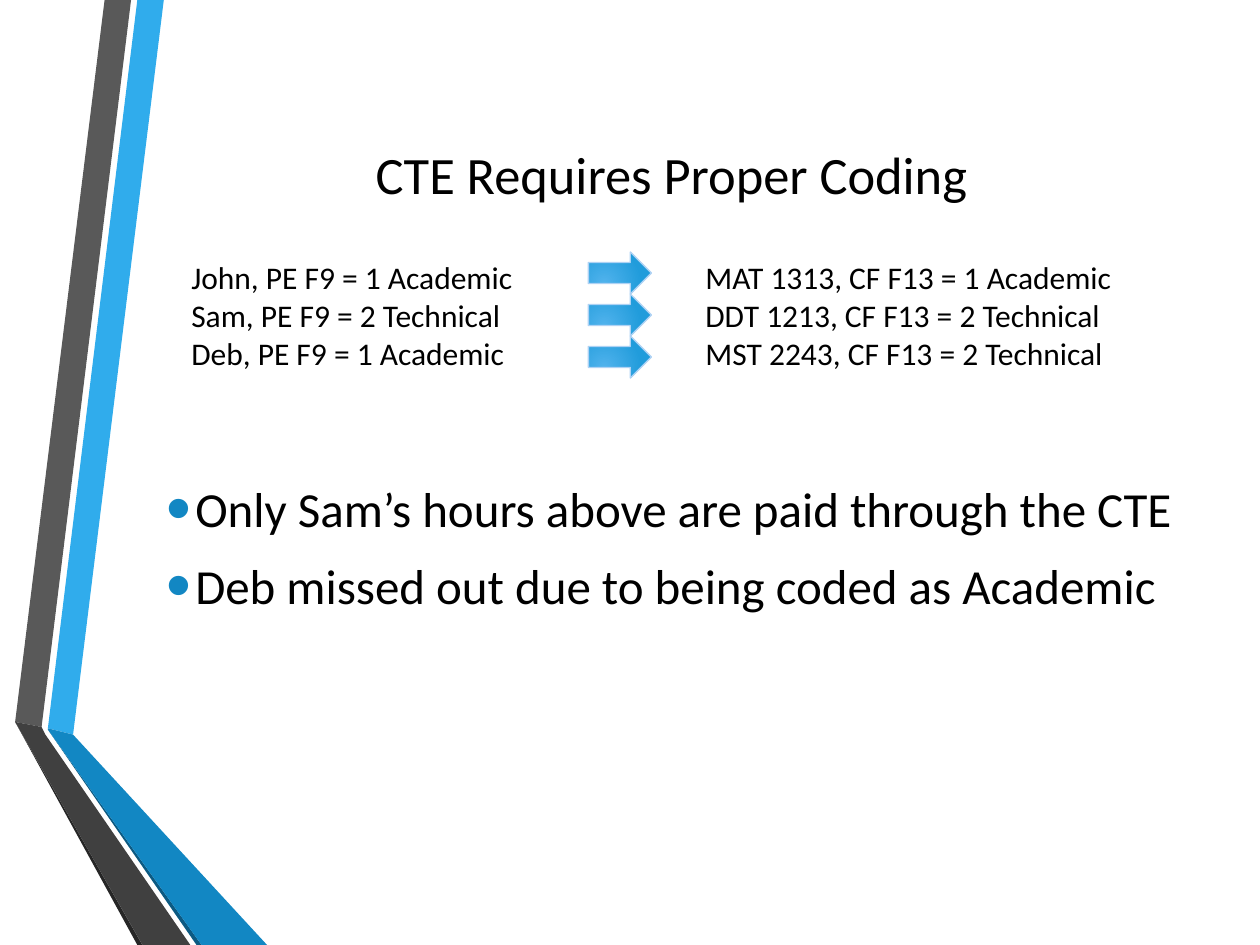
"""Build the slide on proper CTE coding."""
from lxml import etree
from pptx import Presentation
from pptx.dml.color import RGBColor
from pptx.enum.shapes import MSO_SHAPE
from pptx.enum.text import MSO_ANCHOR, MSO_AUTO_SIZE, PP_ALIGN
from pptx.oxml.ns import qn
from pptx.util import Inches, Pt

ARROW = MSO_SHAPE.RIGHT_ARROW
TOP, MID = MSO_ANCHOR.TOP, MSO_ANCHOR.MIDDLE
LEFT, CENTER = PP_ALIGN.LEFT, PP_ALIGN.CENTER
NONE = MSO_AUTO_SIZE.NONE

HUES = {
    "text": "000000", "sky": "30ACEC", "blue": "1287C3", "navy": "0C5A82",
    "gray": "595959", "dark": "404040", "black": "262626",
    "inner": "51B3ED", "outer": "219CDB", "edge": "AED2F4",
}
TITLE = ["CTE Requires Proper Coding"]
POINTS = [
    "Only Sam’s hours above are paid through the CTE",
    "Deb missed out due to being coded as Academic",
]
PEOPLE = [
    "John, PE F9 = 1 Academic",
    "Sam, PE F9 = 2 Technical",
    "Deb, PE F9 = 1 Academic",
]
CODES = [
    "MAT 1313, CF F13 = 1 Academic",
    "DDT 1213, CF F13 = 2 Technical",
    "MST 2243, CF F13 = 2 Technical",
]
BANDS = [
    ("sky", [(0.38, 5.78), (0.58, 5.83), (1.3, 0), (1.09, 0)]),
    ("gray", [(1.04, 0), (0.83, 0), (0.12, 5.73), (0.33, 5.77)]),
    ("black", [(0.12, 5.73), (1.09, 7.5), (1.13, 7.5)]),
    ("navy", [(0.38, 5.79), (1.56, 7.5), (1.6, 7.5)]),
    ("blue", [(0.38, 5.79), (1.6, 7.5), (2.12, 7.5), (0.58, 5.83), (0.38, 5.78)]),
    ("dark", [(1.51, 7.5), (0.36, 5.83), (0.33, 5.77), (0.12, 5.73), (1.13, 7.5)]),
]
ROW_TOP, ROW_GAP = 2, 1 / 3


def rgb(name):
    return RGBColor.from_string(HUES[name])


def place(shape, box):
    for key, val in zip(("left", "top", "width", "height"), box):
        setattr(shape, key, Inches(val))


def write(shape, lines, size, look, align=LEFT):
    frame = shape.text_frame
    for key, val in {"word_wrap": True, "auto_size": NONE, **look}.items():
        setattr(frame, key, val)
    frame.text = "\n".join(lines)
    for para in frame.paragraphs:
        para.alignment = align
        font = para.runs[0].font
        for key, val in {"name": "Calibri", "size": Pt(size)}.items():
            setattr(font, key, val)
        font.color.rgb = rgb("text")


def bullet(para):
    para.space_before, para.space_after = Pt(5.6), Pt(4.5)
    props = para._p.get_or_add_pPr()
    props.set("marL", str(Inches(0.23)))
    props.set("indent", str(Inches(-0.23)))
    hue = etree.SubElement(props, qn("a:buClr"))
    etree.SubElement(hue, qn("a:srgbClr"), val=HUES["blue"])
    for tag, atts in (
        ("buSzPct", {"val": "145000"}),
        ("buFont", {"typeface": "Arial"}),
        ("buChar", {"char": "•"}),
    ):
        etree.SubElement(props, qn("a:" + tag), atts)


def draw_band(shapes, hue, dots):
    dots = [(Inches(x), Inches(y)) for x, y in dots]
    pen = shapes.build_freeform(*dots[0], scale=1.0)
    pen.add_line_segments(dots[1:], close=True)
    band = pen.convert_to_shape()
    band.shadow.inherit = False
    band.fill.solid()
    band.fill.fore_color.rgb = rgb(hue)
    band.line.fill.background()


def draw_arrow(shapes, row):
    box = (4.67, ROW_TOP + row * ROW_GAP, 0.5, ROW_GAP)
    arrow = shapes.add_shape(ARROW, *map(Inches, box))
    arrow.shadow.inherit = False
    arrow.line.color.rgb = rgb("edge")
    arrow.line.width = Pt(0.75)
    arrow.fill.gradient()
    for stop, hue, pos in zip(arrow.fill.gradient_stops, ("inner", "outer"), (0, 1)):
        stop.color.rgb = rgb(hue)
        stop.position = pos
    grad = arrow._element.spPr.find(qn("a:gradFill"))
    grad.remove(grad.find(qn("a:lin")))
    ring = etree.SubElement(grad, qn("a:path"), {"path": "circle"})
    rect = {"l": "50000", "t": "100000", "r": "100000", "b": "50000"}
    etree.SubElement(ring, qn("a:fillToRect"), rect)


def main():
    deck = Presentation()
    deck.slide_width, deck.slide_height = Inches(10), Inches(7.5)
    slide = deck.slides.add_slide(deck.slide_layouts[1])
    shapes = slide.shapes
    title, body = shapes.title, slide.placeholders[1]

    bands = shapes.add_group_shape().shapes
    for hue, dots in BANDS:
        draw_band(bands, hue, dots)

    place(body, (1.22, 3.75, 8.37, 1.75))
    write(body, POINTS, 28, {"vertical_anchor": TOP})
    for para in body.text_frame.paragraphs:
        bullet(para)
    place(title, (1.22, 0.75, 8.22, 1.25))
    write(title, TITLE, 30, {"vertical_anchor": MID}, CENTER)

    for lines, left, width in ((PEOPLE, 1.42, 2.83), (CODES, 5.5, 3.58)):
        box = shapes.add_textbox(*map(Inches, (left, ROW_TOP, width, 1.01)))
        write(box, lines, 18, {"vertical_anchor": TOP})

    arrows = shapes.add_group_shape().shapes
    for row in range(len(PEOPLE)):
        draw_arrow(arrows, row)
    deck.save("out.pptx")


if __name__ == "__main__":
    main()
